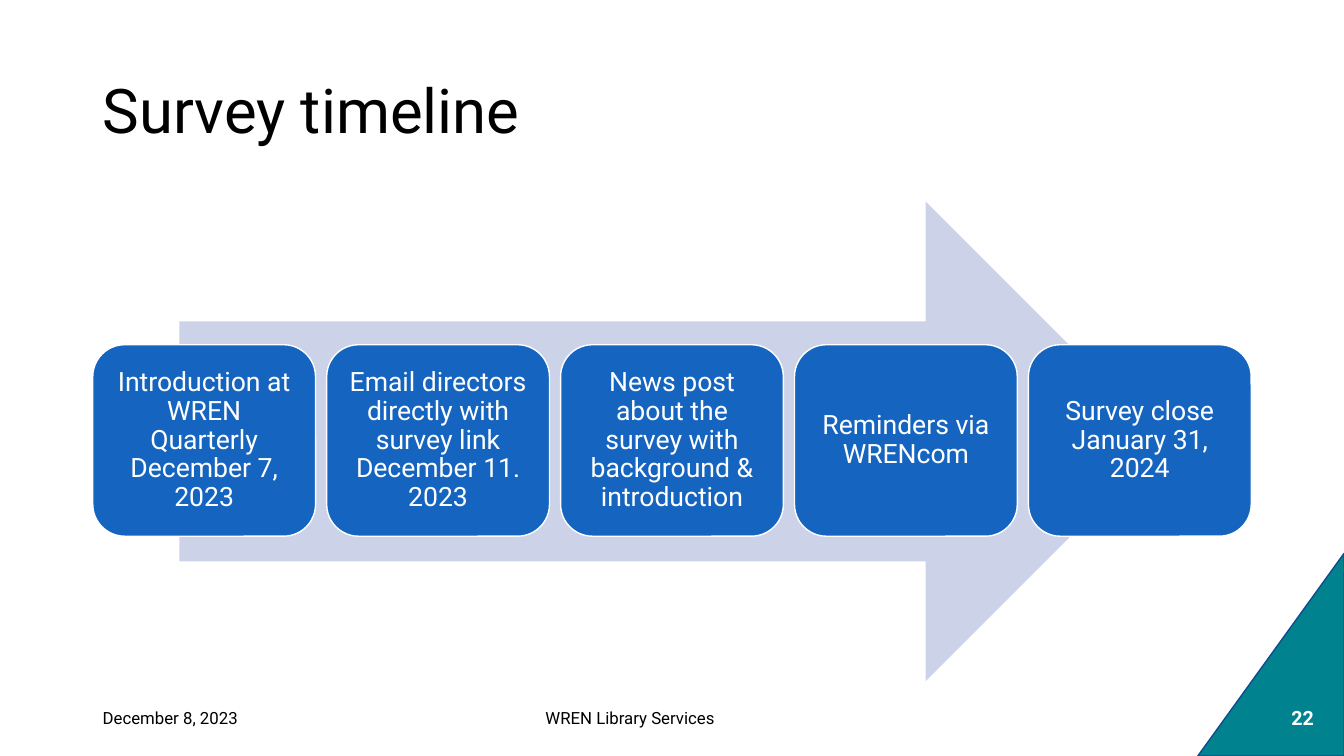
import pptx
import pptx.util
import pptx.dml.color
import pptx.enum.shapes
import pptx.enum.text

Inches = pptx.util.Inches
Pt = pptx.util.Pt
KIND = pptx.enum.shapes.MSO_SHAPE
ALIGN = pptx.enum.text.PP_ALIGN
MIDDLE = pptx.enum.text.MSO_ANCHOR.MIDDLE

STEPS = [
    "Introduction at WREN Quarterly December 7, 2023",
    "Email directors directly with survey link December 11. 2023",
    "News post about the survey with background & introduction",
    "Reminders via WRENcom",
    "Survey close January 31, 2024",
]


def color(code):
    return pptx.dml.color.RGBColor.from_string(code)


class Deck:
    font = "Roboto"
    black, white = "000000", "FFFFFF"
    blue, pale, teal, navy = "1565C0", "CCD3E8", "00838E", "104B8E"

    def __init__(self, slide):
        self.slide = slide

    def fill_text(self, shape, text, size, ink, align, bold=False, space=1.0):
        frame = shape.text_frame
        frame.word_wrap = True
        frame.auto_size = pptx.enum.text.MSO_AUTO_SIZE.NONE
        frame.vertical_anchor = MIDDLE
        frame.text = text
        para = frame.paragraphs[0]
        para.alignment = align
        para.line_spacing = space
        para.font.name = self.font
        para.font.size = Pt(size)
        para.font.bold = bold
        para.font.color.rgb = color(ink)

    def title(self, text, left, top, width, height):
        shape = self.slide.shapes.title
        shape.left, shape.top = Inches(left), Inches(top)
        shape.width, shape.height = Inches(width), Inches(height)
        self.fill_text(shape, text, 44, self.black, ALIGN.LEFT, space=0.9)

    def shape(self, kind, left, top, width, height, fill, line=None):
        shape = self.slide.shapes.add_shape(
            kind, Inches(left), Inches(top), Inches(width), Inches(height))
        shape.shadow.inherit = False
        shape.fill.solid()
        shape.fill.fore_color.rgb = color(fill)
        if line:
            shape.line.color.rgb = color(line)
            shape.line.width = Pt(1)
        else:
            shape.line.fill.background()
        return shape

    def step(self, text, left, top, width, height):
        box = self.shape(KIND.ROUNDED_RECTANGLE, left, top, width, height,
                         self.blue, self.white)
        frame = box.text_frame
        frame.margin_left = frame.margin_right = Inches(0.08)
        frame.margin_top = frame.margin_bottom = Inches(0.08)
        self.fill_text(box, text, 19, self.white, ALIGN.CENTER, space=0.9)

    def label(self, text, left, width, size, ink, align, bold=False):
        box = self.slide.shapes.add_textbox(
            Inches(left), Inches(6.92), Inches(width), Inches(0.4))
        self.fill_text(box, text, size, ink, align, bold)


def main():
    show = pptx.Presentation()
    show.slide_width, show.slide_height = Inches(13.33), Inches(7.5)
    deck = Deck(show.slides.add_slide(show.slide_layouts[5]))

    # Corner and title
    corner = deck.shape(KIND.RIGHT_TRIANGLE, 11.6, 5.77, 2.01, 1.45,
                        deck.teal, deck.navy)
    corner.rotation = 270
    deck.title("Survey timeline", 0.92, 0.4, 11.5, 1.45)

    # Timeline: arrow with evenly spaced steps
    deck.shape(KIND.RIGHT_ARROW, 1.78, 2, 9.78, 4.76, deck.pale)
    for index, text in enumerate(STEPS):
        deck.step(text, 0.92 + 2.32 * index, 3.42, 2.21, 1.9)

    # Footer
    deck.label("December 8, 2023", 0.92, 3, 12, deck.black, ALIGN.LEFT)
    deck.label("WREN Library Services", 4, 4.5, 12, deck.black, ALIGN.CENTER)
    deck.label("22", 12.63, 0.58, 14, deck.white, ALIGN.CENTER, bold=True)

    show.save("out.pptx")


if __name__ == "__main__":
    main()
